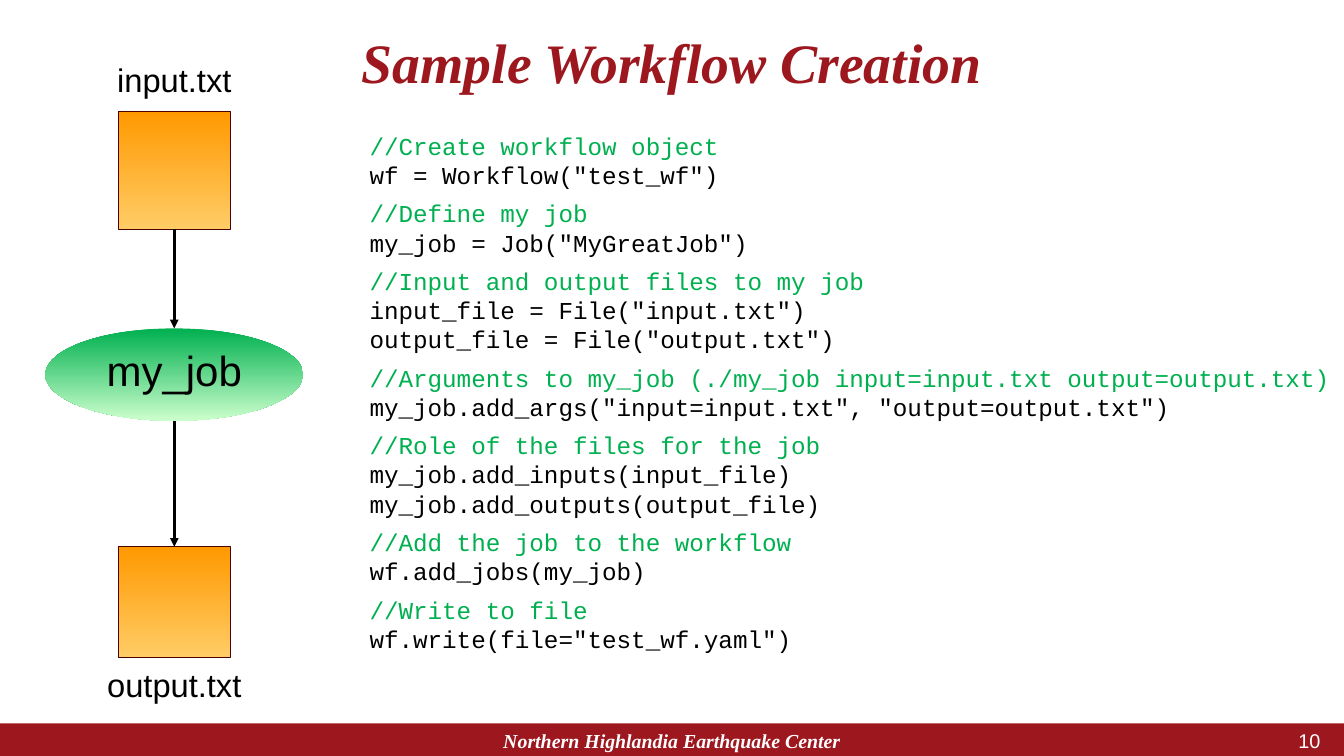
import pptx
import pptx.dml.color
import pptx.enum.shapes
import pptx.enum.text
import pptx.util
from lxml import etree
from pptx.oxml.ns import qn

Pt = pptx.util.Pt
ALIGN = pptx.enum.text.PP_ALIGN
ANCHOR = pptx.enum.text.MSO_ANCHOR
SHAPE = pptx.enum.shapes.MSO_SHAPE

COLORS = {
    "red": "9D171E", "white": "FFFFFF", "black": "000000", "comment": "00B050",
    "job_top": "00B050", "job_bottom": "CCFFCC",
    "file_top": "FF9900", "file_bottom": "FFCC66", "file_line": "4C0000",
}
SLIDE_W, SLIDE_H = 1152, 648
CODE_BLOCKS = [
    ["//Create workflow object", 'wf = Workflow("test_wf")'],
    ["//Define my job", 'my_job = Job("MyGreatJob")'],
    ["//Input and output files to my job",
     'input_file = File("input.txt")', 'output_file = File("output.txt")'],
    ["//Arguments to my_job (./my_job input=input.txt output=output.txt)",
     'my_job.add_args("input=input.txt", "output=output.txt")'],
    ["//Role of the files for the job",
     "my_job.add_inputs(input_file)", "my_job.add_outputs(output_file)"],
    ["//Add the job to the workflow", "wf.add_jobs(my_job)"],
    ["//Write to file", 'wf.write(file="test_wf.yaml")'],
]


def rgb(name):
    return pptx.dml.color.RGBColor.from_string(COLORS[name])


def add_run(p, text, size, font, color, strong=False):
    r = p.add_run()
    r.text = text
    r.font.size, r.font.name = Pt(size), font
    r.font.color.rgb = rgb(color)
    r.font.bold = r.font.italic = strong


def place(sp, x, y, w, h):
    sp.left, sp.top, sp.width, sp.height = Pt(x), Pt(y), Pt(w), Pt(h)


def set_frame(tf, anchor, inset_x=8.64, inset_y=4.32):
    tf.word_wrap = True
    tf.auto_size = pptx.enum.text.MSO_AUTO_SIZE.NONE
    tf.vertical_anchor = anchor
    tf.margin_left = tf.margin_right = Pt(inset_x)
    tf.margin_top = tf.margin_bottom = Pt(inset_y)


def add_label(s, x, y, w, h, text, size, font="Arial", color="black",
              align=ALIGN.CENTER, anchor=ANCHOR.TOP, strong=False):
    tf = s.shapes.add_textbox(Pt(x), Pt(y), Pt(w), Pt(h)).text_frame
    set_frame(tf, anchor, 7.2, 3.6)
    p = tf.paragraphs[0]
    p.alignment = align
    add_run(p, text, size, font, color, strong)


def add_gradient_shape(s, kind, x, y, w, h, top, bottom, line=None):
    sp = s.shapes.add_shape(kind, Pt(x), Pt(y), Pt(w), Pt(h))
    sp.shadow.inherit = False
    sp.fill.gradient()
    sp.fill.gradient_angle = 270
    for stop, color, position in zip(sp.fill.gradient_stops, (top, bottom), (0, 1)):
        stop.color.rgb = rgb(color)
        stop.position = position
    if line:
        sp.line.color.rgb = rgb(line)
        sp.line.width = Pt(0.75)
    else:
        sp.line.fill.background()
    return sp


def add_arrow(s, x, y1, y2):
    cx = s.shapes.add_connector(pptx.enum.shapes.MSO_CONNECTOR.STRAIGHT,
                                Pt(x), Pt(y1), Pt(x), Pt(y2))
    cx.line.color.rgb = rgb("black")
    cx.line.width = Pt(2.5)
    etree.SubElement(cx.line._get_or_add_ln(), qn("a:tailEnd"), type="triangle")
    etree.SubElement(cx._element.spPr, qn("a:effectLst"))
    return cx


def add_title(s, x, y, w, h):
    place(s.shapes.title, x, y, w, h)
    tf = s.shapes.title.text_frame
    set_frame(tf, ANCHOR.TOP)
    p = tf.paragraphs[0]
    p.alignment, p.line_spacing = ALIGN.CENTER, 0.9
    add_run(p, "Sample Workflow Creation", 47.7, "Times New Roman", "red", True)


def add_diagram(s, x, y, w, h):
    """Input file, job and output file, stacked on one centre line."""
    mid, file_w, job_w = x + w / 2, 95.8, 221
    file_x = mid - file_w / 2
    job_y, job_h = y + 233.3, 79.2
    file_colors = ("file_top", "file_bottom", "file_line")

    job = add_gradient_shape(s, SHAPE.OVAL, mid - job_w / 2, job_y, job_w, job_h,
                             "job_top", "job_bottom")
    source = add_gradient_shape(s, SHAPE.RECTANGLE, file_x, y + 47.5, file_w, 100.8,
                                *file_colors)
    result = add_gradient_shape(s, SHAPE.RECTANGLE, file_x, y + 420.5, file_w, 95,
                                *file_colors)

    to_job = add_arrow(s, mid, y + 148.3, job_y)
    to_job.begin_connect(source, 2)
    to_job.end_connect(job, 0)
    from_job = add_arrow(s, mid, job_y + job_h, y + 420.5)
    from_job.end_connect(result, 0)

    add_label(s, x, y, w, 41, "input.txt", 28)
    add_label(s, x, job_y + 10.1, w, 51, "my_job", 36)
    add_label(s, x, y + h - 41, w, 41, "output.txt", 28)


def add_code(s, x, y, w, h):
    body = s.placeholders[1]
    place(body, x, y, w, h)
    tf = body.text_frame
    set_frame(tf, ANCHOR.TOP)
    p = None
    for block in CODE_BLOCKS:
        for i, line in enumerate(block):
            before = 0 if i else 8 if p else 6
            p = tf.add_paragraph() if p else tf.paragraphs[0]
            p.alignment = ALIGN.LEFT
            p.space_before = Pt(before)
            pPr = p._p.get_or_add_pPr()
            pPr.set("marL", str(Pt(22.3)))
            pPr.set("indent", str(Pt(-21.6)))
            etree.SubElement(pPr, qn("a:buNone"))
            add_run(p, line, 20.8, "Courier New", "black" if i else "comment")


def add_footer(s, x, y, w, h):
    bar = s.shapes.add_shape(SHAPE.RECTANGLE, Pt(x), Pt(y), Pt(w), Pt(h))
    bar.shadow.inherit = False
    bar.fill.solid()
    bar.fill.fore_color.rgb = rgb("red")
    bar.line.fill.background()
    add_label(s, x + w / 2 - 194.4, y + 0.4, 388.8, h, "Northern Highlandia Earthquake Center",
              17, "Times New Roman", "white", anchor=ANCHOR.MIDDLE, strong=True)
    add_label(s, x + w - 122.4, y + 0.4, 109.4, h, "10", 17, color="white",
              align=ALIGN.RIGHT, anchor=ANCHOR.MIDDLE)


def main():
    prs = pptx.Presentation()
    prs.slide_width, prs.slide_height = Pt(SLIDE_W), Pt(SLIDE_H)
    s = prs.slides.add_slide(prs.slide_layouts[1])
    add_footer(s, 0, 620, SLIDE_W, 28)
    add_title(s, 28.8, 25.9, 1094.4, 60.5)
    add_diagram(s, 34.2, 48.2, 230.4, 558.7)
    add_code(s, 307.4, 108, 844.6, 498.2)
    prs.save("out.pptx")


if __name__ == "__main__":
    main()
